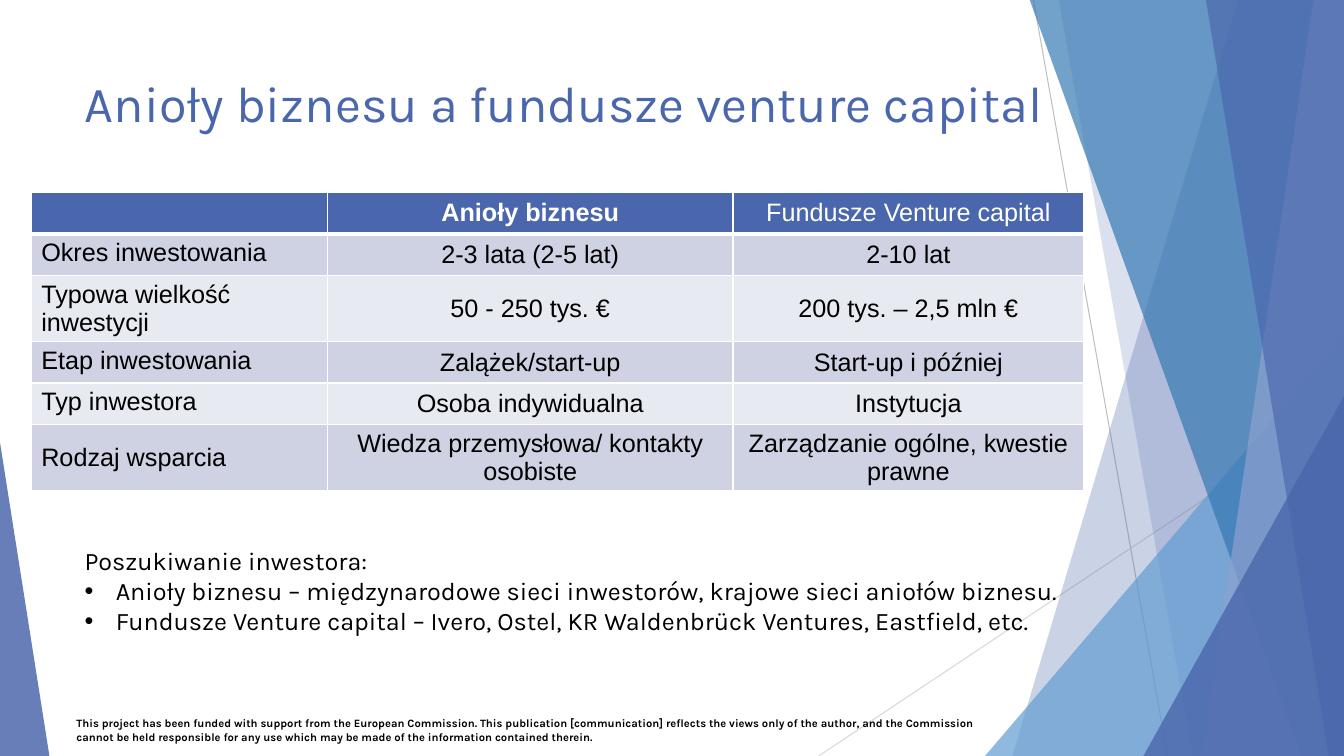
import lxml.etree
import pptx
import pptx.dml.color
import pptx.enum.shapes
import pptx.enum.text
import pptx.oxml.ns
import pptx.util

Inches = pptx.util.Inches
qn = pptx.oxml.ns.qn
ALIGN = pptx.enum.text.PP_ALIGN
ANCHOR = pptx.enum.text.MSO_ANCHOR
SHAPE = pptx.enum.shapes.MSO_SHAPE

COLORS = {
    "navy": "4A66AC", "blue": "3477B2", "sky": "629DD1", "pale": "8FA1CF",
    "band": "CED2E2", "light": "E8EAF1", "white": "FFFFFF", "black": "000000",
    "gray": "BFBFBF", "silver": "D8D8D8",
}
WIDTH, HEIGHT = 13.33, 7.5


class Deck:
    """Holds the style and the current slide, and draws each kind of element."""
    font = "Karla"

    def __init__(self):
        self.prs = pptx.Presentation()
        self.prs.slide_width = Inches(WIDTH)
        self.prs.slide_height = Inches(HEIGHT)
        self.slide = self.prs.slides.add_slide(self.prs.slide_layouts[5])
        self.shapes = self.slide.shapes

    def color(self, name):
        return pptx.dml.color.RGBColor.from_string(COLORS[name])

    def run(self, para, text, size, color="black", bold=False, font=None):
        run = para.add_run()
        run.text = text
        run.font.name = font or self.font
        run.font.size = pptx.util.Pt(size)
        run.font.bold = bold
        run.font.color.rgb = self.color(color)

    def line(self, start, end, color):
        ends = [Inches(v) for v in (*start, *end)]
        line = self.shapes.add_connector(
            pptx.enum.shapes.MSO_CONNECTOR.STRAIGHT, *ends)
        line.line.color.rgb = self.color(color)
        line.line.width = pptx.util.Pt(0.75)
        lxml.etree.SubElement(line._element.spPr, qn("a:effectLst"))

    def paint(self, shape, color, alpha):
        """Fill a shape with a colour at the given opacity in percent."""
        shape.shadow.inherit = False
        shape.fill.solid()
        shape.fill.fore_color.rgb = self.color(color)
        shape.line.fill.background()
        tint = next(shape._element.spPr.iter(qn("a:srgbClr")))
        lxml.etree.SubElement(tint, qn("a:alpha"), val=str(alpha * 1000))

    def shard(self, top, foot, color, alpha):
        """Draw a full-height panel from a slanted left edge to the slide's right."""
        high = -0.01
        points = [(WIDTH, high), (WIDTH, HEIGHT), (foot, HEIGHT)]
        form = self.shapes.build_freeform(Inches(top), Inches(high))
        form.add_line_segments([(Inches(x), Inches(y)) for x, y in points])
        self.paint(form.convert_to_shape(), color, alpha)

    def wedge(self, left, top, width, tip, color, alpha):
        """Draw a triangle standing on the slide's foot, its tip at 0 to 1 across."""
        box = [Inches(v) for v in (left, top, width, HEIGHT - top)]
        shape = self.shapes.add_shape(SHAPE.ISOSCELES_TRIANGLE, *box)
        shape.adjustments[0] = tip
        self.paint(shape, color, alpha)

    def title(self, text, left, top, width, height):
        title = self.shapes.title
        title._element.getparent().append(title._element)
        title.left, title.top = Inches(left), Inches(top)
        title.width, title.height = Inches(width), Inches(height)
        frame = title.text_frame
        frame.word_wrap = True
        frame.auto_size = pptx.enum.text.MSO_AUTO_SIZE.NONE
        frame.vertical_anchor = ANCHOR.TOP
        frame.paragraphs[0].alignment = ALIGN.LEFT
        self.run(frame.paragraphs[0], text, 36, "navy")

    def bullet(self, para):
        props = para._p.get_or_add_pPr()
        props.set("marL", str(Inches(0.31)))
        props.set("indent", str(-Inches(0.31)))
        tint = lxml.etree.SubElement(props, qn("a:buClr"))
        lxml.etree.SubElement(tint, qn("a:srgbClr"), val=COLORS["black"])
        lxml.etree.SubElement(props, qn("a:buFont"), typeface="Arial")
        lxml.etree.SubElement(props, qn("a:buChar"), char="•")

    def text(self, box, size, lead, items=(), bold=False):
        """Add a text box with a lead paragraph and bulleted items below it."""
        shape = self.shapes.add_textbox(*[Inches(v) for v in box])
        frame = shape.text_frame
        frame.word_wrap = True
        self.run(frame.paragraphs[0], lead, size, bold=bold)
        for item in items:
            para = frame.add_paragraph()
            self.bullet(para)
            self.run(para, item, size)

    def border(self, cell, **widths):
        props = cell._tc.get_or_add_tcPr()
        for side in "LRTB":
            width = pptx.util.Pt(widths.get(side, 1))
            edge = lxml.etree.SubElement(props, qn("a:ln" + side), w=str(width))
            fill = lxml.etree.SubElement(edge, qn("a:solidFill"))
            lxml.etree.SubElement(fill, qn("a:srgbClr"), val=COLORS["white"])

    def table(self, left, top, cols, heights, rows):
        box = [Inches(v) for v in (left, top, sum(cols), sum(heights))]
        table = self.shapes.add_table(len(rows), len(cols), *box).table
        for col, width in zip(table.columns, cols):
            col.width = Inches(width)
        for row, height in zip(table.rows, heights):
            row.height = Inches(height)
        for r, row in enumerate(rows):
            fill = "navy" if r == 0 else "band" if r % 2 else "light"
            rule = {0: {"B": 3}, 1: {"T": 3}}.get(r, {})
            for c, text in enumerate(row):
                cell = table.cell(r, c)
                self.border(cell, **rule)
                cell.fill.solid()
                cell.fill.fore_color.rgb = self.color(fill)
                mid = c > 0 or r == len(rows) - 1
                cell.vertical_anchor = ANCHOR.MIDDLE if mid else ANCHOR.TOP
                para = cell.text_frame.paragraphs[0]
                para.alignment = ALIGN.CENTER if c else ALIGN.LEFT
                if text:
                    self.run(para, text, 18, "black" if r else "white",
                             bold=(r, c) == (0, 1), font="Arial")


def main():
    deck = Deck()

    deck.line((10.25, 0), (11.58, HEIGHT), "gray")
    deck.line((WIDTH, 4.03), (8.12, HEIGHT), "silver")
    deck.shard(12.28, 10.04, "navy", 29)
    deck.shard(10.5, 11.83, "navy", 20)
    deck.wedge(9.77, 3.33, 3.56, 1, "sky", 71)
    deck.shard(10.21, 12.91, "blue", 69)
    deck.shard(13.03, 11.92, "pale", 69)
    deck.shard(11.96, 13.18, "navy", 64)
    deck.wedge(11.34, 3.93, 1.99, 1, "navy", 80)
    deck.wedge(0, 4.39, 0.49, 0, "navy", 84)

    deck.text(
        (0.66, 7.06, 9.46, 0.37), 8,
        "This project has been funded with support from the European Commission. "
        "This publication [communication] reflects the views only of the author, "
        "and the Commission cannot be held responsible for any use which may be "
        "made of the information contained therein.", bold=True)
    deck.title("Anioły biznesu a fundusze venture capital",
               0.74, 0.67, 10.29, 1.44)
    deck.table(0.31, 1.91, [2.94, 4.02, 3.48],
               [0.41, 0.41, 0.65, 0.41, 0.41, 0.65], [
        ("", "Anioły biznesu", "Fundusze Venture capital"),
        ("Okres inwestowania", "2-3 lata (2-5 lat)", "2-10 lat"),
        ("Typowa wielkość inwestycji", "50 - 250 tys. €", "200 tys. – 2,5 mln €"),
        ("Etap inwestowania", "Zalążek/start-up", "Start-up i później"),
        ("Typ inwestora", "Osoba indywidualna", "Instytucja"),
        ("Rodzaj wsparcia", "Wiedza przemysłowa/ kontakty osobiste",
         "Zarządzanie ogólne, kwestie prawne"),
    ])
    deck.text((0.74, 5.36, 10.44, 1.01), 18, "Poszukiwanie inwestora:", [
        "Anioły biznesu – międzynarodowe sieci inwestorów, "
        "krajowe sieci aniołów biznesu.",
        "Fundusze Venture capital – Ivero, Ostel, KR Waldenbrück Ventures, "
        "Eastfield, etc.",
    ])
    deck.prs.save("out.pptx")


if __name__ == "__main__":
    main()
